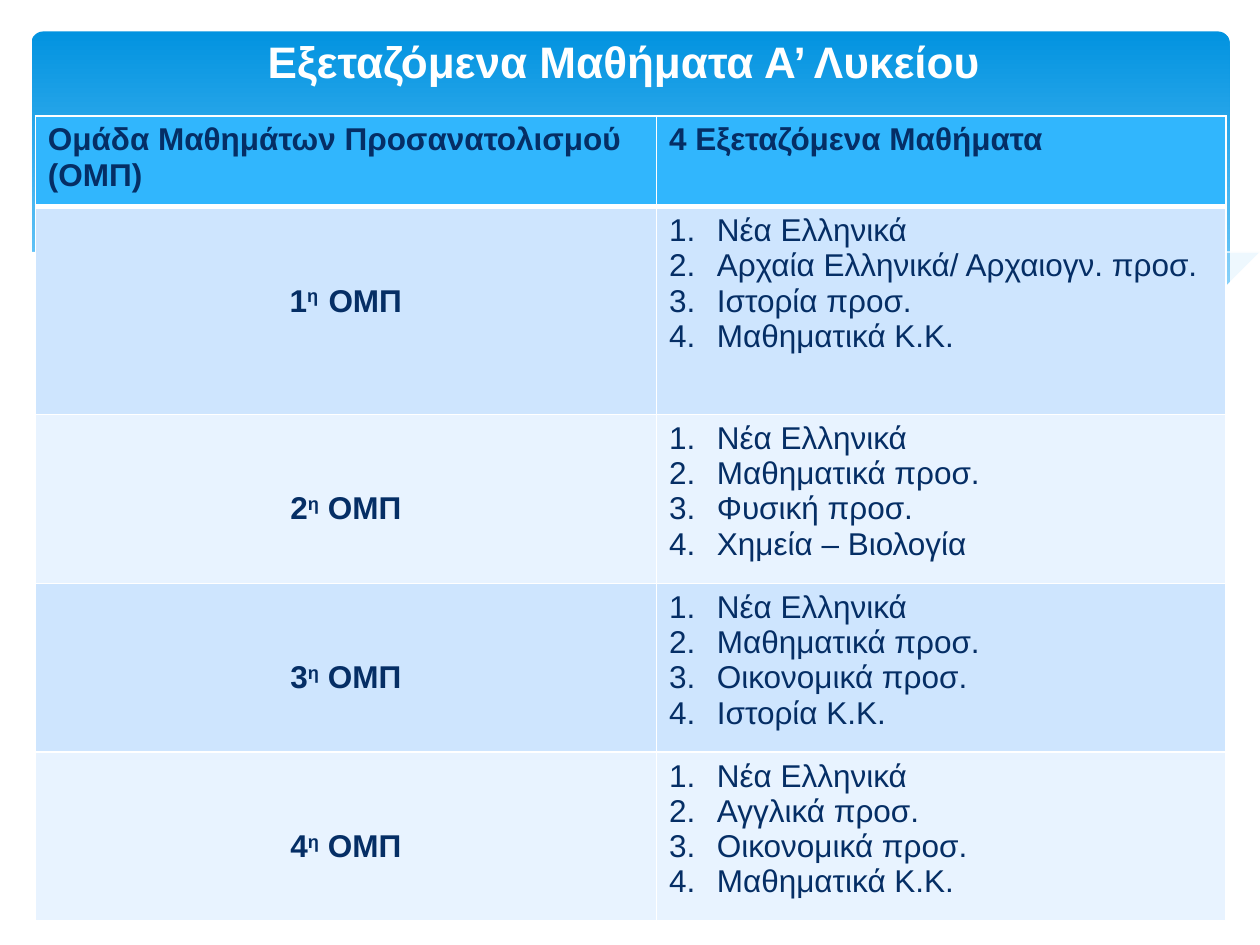
from lxml import etree
from pptx import Presentation
from pptx import util as u
from pptx.dml.color import RGBColor
from pptx.enum import shapes, text
from pptx.oxml import ns

HUES = {"white": "FFFFFF", "navy": "052E65", "head": "31B6FD", "odd": "CEE5FE",
        "even": "E8F3FF", "deep": "0293E0", "sky": "83D3FE", "mist": "C6E7FC"}
rgb = {name: RGBColor.from_string(hue) for name, hue in HUES.items()}


def add_run(para, words, size, hue, **looks):
    run = para.add_run()
    run.text = words
    run.font.color.rgb = rgb[hue]
    for key, value in {"name": "Arial", "size": u.Pt(size), **looks}.items():
        setattr(run.font, key, value)
    return run


def add_sub(node, tag, **attrs):
    return etree.SubElement(node, ns.qn(tag), {k: str(v) for k, v in attrs.items()})


# Slide on a grid of 10 columns by 7.5 rows
deck = Presentation()
deck.slide_width, deck.slide_height = u.Inches(10), u.Inches(7.5)
cell_len = deck.slide_width // 10
slide = deck.slides.add_slide(deck.slide_layouts[6])

# Blue band
band = slide.shapes.add_shape(shapes.MSO_SHAPE.ROUNDED_RECTANGLE,
                              *[int(n * cell_len) for n in (0.25, 0.25, 9.51, 2.7)])
band.adjustments[0] = 0.034
band.shadow.inherit = False
band.line.fill.background()
band.fill.gradient()
band.fill.gradient_angle = 270
for stop, hue, place in zip(band.fill.gradient_stops, ("deep", "sky"), (0, 0.9)):
    stop.color.rgb = rgb[hue]
    stop.position = place

# Waves: fill, opacity in percent, points in grid cells
waves = [
    ("mist", 29, [(9.76, 2), (9.35, 2.07), (8.61, 2.23), (7.53, 2.48), (6.61, 2.65),
                  (7.19, 2.72), (8.03, 2.78), (8.81, 2.73), (9.35, 2.62), (9.76, 2.47)]),
    ("mist", 40, [(8.93, 2.73), (8.07, 2.6), (7.06, 2.4), (5.84, 2.11), (4.89, 1.94),
                  (3.8, 1.85), (2.86, 1.91), (3.83, 2.07), (4.91, 2.32), (6.01, 2.55),
                  (6.95, 2.7), (7.96, 2.78), (8.48, 2.77)]),
    (None, 0, [(3.09, 1.95), (3.53, 1.89), (4.16, 1.87), (5.1, 1.92), (6.08, 2.04),
               (6.95, 2.19), (7.95, 2.41), (9.07, 2.72)]),
    (None, 0, [(6.13, 2.57), (6.95, 2.35), (7.76, 2.16), (8.66, 1.99), (9.24, 1.9),
               (9.75, 1.85)]),
    ("white", 100, [(9.77, 2.46), (9.3, 2.62), (8.75, 2.73), (8.09, 2.77), (7.26, 2.72),
                    (6.26, 2.58), (5.29, 2.39), (4.18, 2.13), (3.16, 1.94), (2.3, 1.85),
                    (1.61, 1.84), (0.95, 1.91), (0.46, 2.03), (0.23, 2.13),
                    (0.23, 3.29), (9.77, 3.29)]),
]
for hue, alpha, points in waves:
    pen = slide.shapes.build_freeform(*points[0], scale=cell_len)
    pen.add_line_segments(points[1:], close=bool(hue))
    wave = pen.convert_to_shape()
    wave.shadow.inherit = False
    if hue:
        wave.fill.solid()
        wave.fill.fore_color.rgb = rgb[hue]
        wave.line.fill.background()
        paint = wave.fill._xPr.find(ns.qn("a:solidFill"))
        add_sub(paint[0], "a:alpha", val=alpha * 1000)
    else:
        wave.fill.background()
        wave.line.color.rgb = rgb["white"]
        wave.line.width = 0

# Title
title = slide.shapes.add_textbox(*[int(n * cell_len) for n in (0.5, 0.21, 9, 0.54)])
frame = title.text_frame
frame.word_wrap = True
frame.vertical_anchor = text.MSO_ANCHOR.MIDDLE
frame.paragraphs[0].alignment = text.PP_ALIGN.CENTER
add_run(frame.paragraphs[0], "Εξεταζόμενα Μαθήματα Α’ Λυκείου ", 25.2, "white", bold=True)

# Table content
heads = ["Ομάδα Μαθημάτων Προσανατολισμού (ΟΜΠ)", "4 Εξεταζόμενα Μαθήματα"]
groups = [
    ("η  ", "ΟΜΠ", ["Αρχαία Ελληνικά/ Αρχαιογν. προσ.", "Ιστορία προσ.", "Μαθηματικά Κ.Κ."]),
    ("η", " ΟΜΠ", ["Μαθηματικά προσ.", "Φυσική προσ.", "Χημεία – Βιολογία"]),
    ("η", " ΟΜΠ", ["Μαθηματικά προσ.", "Οικονομικά προσ.", "Ιστορία Κ.Κ."]),
    ("η", " ΟΜΠ", ["Αγγλικά προσ.", "Οικονομικά προσ.", "Μαθηματικά Κ.Κ."]),
]
cols, rows = [4.93, 4.52], [0.72, 1.65] + [1.34] * 3
table = slide.shapes.add_table(
    len(rows), len(cols),
    *[int(n * cell_len) for n in (0.28, 0.92, sum(cols), sum(rows))]).table
table.horz_banding = False
for col, span in zip(table.columns, cols):
    col.width = int(span * cell_len)
for row, span in zip(table.rows, rows):
    row.height = int(span * cell_len)

# Cell fills and borders
for r, row in enumerate(table.rows):
    for cell in row.cells:
        props = cell._tc.get_or_add_tcPr()
        for side in "LRTB":
            thick = 3 if (r, side) in ((0, "B"), (1, "T")) else 1
            edge = add_sub(props, f"a:ln{side}", w=u.Pt(thick))
            add_sub(add_sub(edge, "a:solidFill"), "a:srgbClr", val=HUES["white"])
        cell.fill.solid()
        cell.fill.fore_color.rgb = rgb["head" if r == 0 else "odd" if r % 2 else "even"]

# Header row
for c, words in enumerate(heads):
    add_run(table.cell(0, c).text_frame.paragraphs[0], words, 18, "navy", bold=True)

# One row per group: its name, then its numbered subjects
for r, (mark, name, topics) in enumerate(groups, 1):
    label = table.cell(r, 0)
    label.margin_top = int(0.61 * cell_len)
    para = label.text_frame.paragraphs[0]
    para.alignment = text.PP_ALIGN.CENTER
    for words in (str(r), mark, name):
        run = add_run(para, words, 18, "navy", bold=True)
        if words == mark:
            run.font._element.set("baseline", "30000")

    frame = table.cell(r, 1).text_frame
    for n, topic in enumerate(["Νέα Ελληνικά"] + topics):
        para = frame.add_paragraph() if n else frame.paragraphs[0]
        add_run(para, topic, 18, "navy", bold=False)
        props = para._p.get_or_add_pPr()
        indent = int(0.38 * cell_len)
        props.set("marL", str(indent))
        props.set("indent", str(-indent))
        add_sub(props, "a:buAutoNum", type="arabicPeriod")

deck.save("out.pptx")
